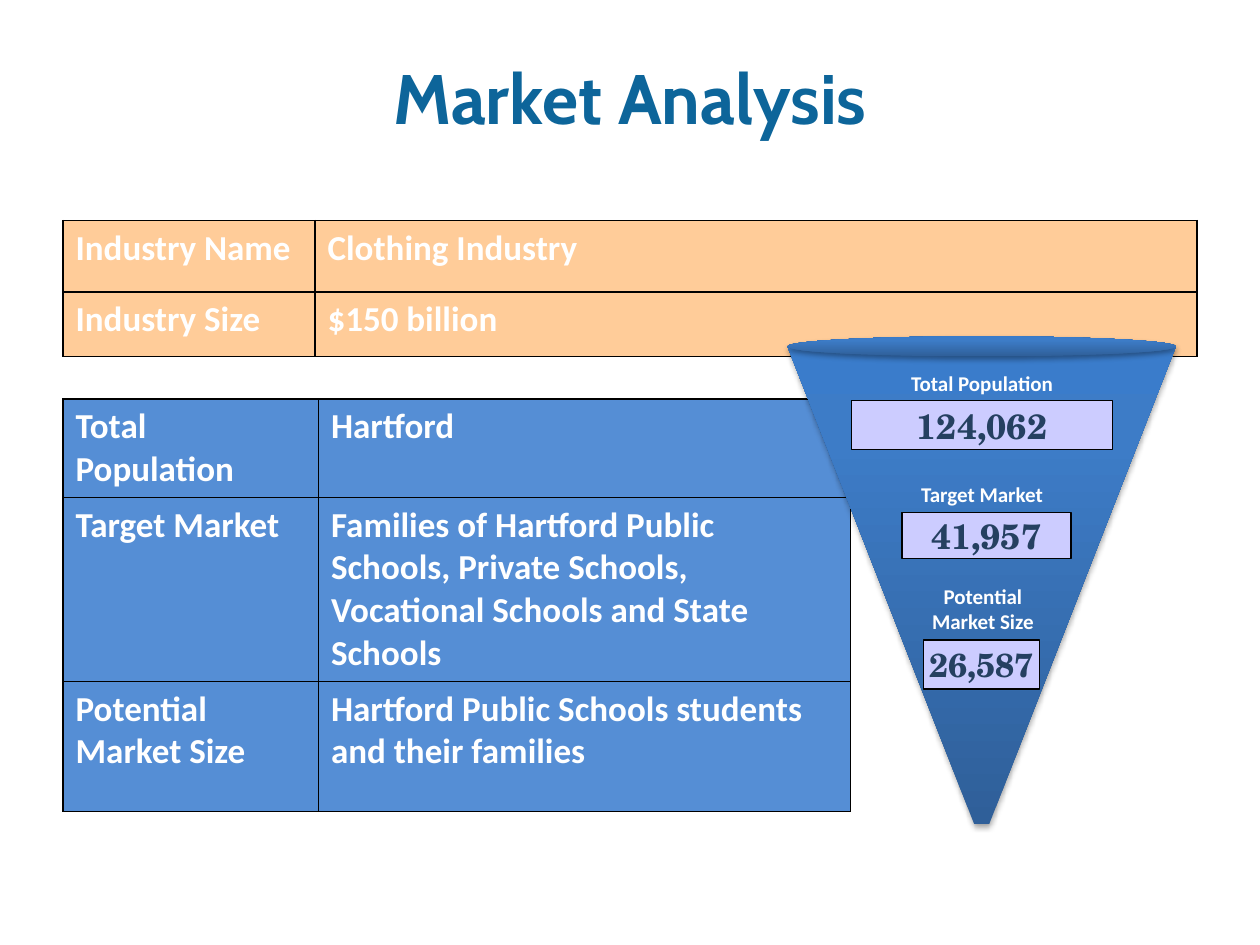
from copy import deepcopy

from lxml import etree
from pptx import Presentation
from pptx.dml.color import RGBColor
from pptx.enum.shapes import MSO_SHAPE
from pptx.enum.text import MSO_ANCHOR, PP_ALIGN
from pptx.oxml.ns import qn
from pptx.util import Pt

LEFT, CENTER = PP_ALIGN.LEFT, PP_ALIGN.CENTER
TOP, MIDDLE = MSO_ANCHOR.TOP, MSO_ANCHOR.MIDDLE
OVAL, PROCESS = MSO_SHAPE.OVAL, MSO_SHAPE.FLOWCHART_PROCESS
TITLE_ONLY = 5

INDUSTRY = [("Industry Name", "Clothing Industry"),
            ("Industry Size", "$150 billion")]
MARKET = [
    ("Total Population", "Hartford"),
    ("Target Market", "Families of Hartford Public Schools, Private Schools, "
                      "Vocational Schools and State Schools"),
    ("Potential Market Size", "Hartford Public Schools students and their families"),
]
# Label, its box, value, its size and box; boxes are relative to the funnel
FUNNEL_LEVELS = [
    ("Total Population", (36.7, 15.8, 149, 21), "124,062", 20, (36.7, 36.7, 149, 28)),
    ("Target Market", (36.7, 79.2, 149, 21), "41,957", 20, (65.5, 100.8, 96.5, 26)),
    ("Potential Market Size", (63.4, 137.5, 96.5, 34.6), "26,587", 19,
     (77.8, 173.5, 66.2, 28)),
]
FUNNEL_GRADIENT = [(0, "2F5F99"), (0.8, "3D7CC7"), (1, "3A7CCB")]


def color(value):
    return RGBColor.from_string(value)


def points(values):
    return [Pt(value) for value in values]


def write(frame, text, size=20, font="Calibri", fill="FFFFFF", align=LEFT,
          anchor=TOP, wrap=True, line_spacing=None):
    frame.word_wrap = wrap
    frame.vertical_anchor = anchor
    paragraph = frame.paragraphs[0]
    paragraph.alignment = align
    if line_spacing:
        paragraph.line_spacing = Pt(line_spacing)
    run = paragraph.add_run()
    run.text = text
    run.font.size = Pt(size)
    run.font.name = font
    run.font.bold = True
    run.font.color.rgb = color(fill)


def add_title(slide, box, text):
    title = slide.shapes.title
    title.left, title.top, title.width, title.height = points(box)
    write(title.text_frame, text, size=40, font="Cabin", fill="0D659A",
          align=CENTER, anchor=MIDDLE, line_spacing=34)


def add_borders(cell, line_color="000000", width=1):
    properties = cell._tc.get_or_add_tcPr()
    for side in ("a:lnL", "a:lnR", "a:lnT", "a:lnB"):
        line = etree.SubElement(properties, qn(side), w=str(Pt(width)))
        fill = etree.SubElement(line, qn("a:solidFill"))
        etree.SubElement(fill, qn("a:srgbClr"), val=line_color)


def add_grid(slide, left, top, widths, heights, rows, fill):
    """Add a bordered table with one fill for all its cells."""
    box = points((left, top, sum(widths), sum(heights)))
    table = slide.shapes.add_table(len(rows), len(widths), *box).table
    table.first_row = table.horz_banding = False
    for column, width in zip(table.columns, widths):
        column.width = Pt(width)
    for row, height, texts in zip(table.rows, heights, rows):
        row.height = Pt(height)
        for cell, text in zip(row.cells, texts):
            add_borders(cell)
            cell.fill.solid()
            cell.fill.fore_color.rgb = color(fill)
            write(cell.text_frame, text)


def style_funnel_part(shape):
    """Give a shape the funnel's gradient and soft shadow, without a line."""
    shape.fill.gradient()
    shape.fill.gradient_angle = 90
    properties = shape._element.spPr
    stop_list = properties.find(".//" + qn("a:gsLst"))
    stop_list.append(deepcopy(stop_list[-1]))
    for stop, (position, value) in zip(shape.fill.gradient_stops, FUNNEL_GRADIENT):
        stop.position = position
        stop.color.rgb = color(value)
    shape.line.fill.background()
    shape.shadow.inherit = False
    shadow = etree.SubElement(
        properties.find(qn("a:effectLst")), qn("a:outerShdw"),
        blurRad=str(Pt(3.1)), dist=str(Pt(1.8)), dir="5400000", rotWithShape="0")
    shadow_color = etree.SubElement(shadow, qn("a:srgbClr"), val="000000")
    etree.SubElement(shadow_color, qn("a:alpha"), val="35000")


def add_funnel(slide, left, top, width, height, rim=11.5, tip=8.6):
    shapes = slide.shapes.add_group_shape().shapes
    middle, mouth = left + width / 2, top + rim / 2
    bottom = top + height
    builder = shapes.build_freeform(Pt(left), Pt(mouth))
    builder.add_line_segments([
        points((middle - tip / 2, bottom)),
        points((middle + tip / 2, bottom)),
        points((left + width, mouth)),
    ])
    style_funnel_part(builder.convert_to_shape())
    style_funnel_part(shapes.add_shape(OVAL, *points((left, top, width, rim))))

    for label, label_box, value, size, value_box in FUNNEL_LEVELS:
        x, y, *extent = value_box
        box = shapes.add_shape(PROCESS, *points((left + x, top + y, *extent)))
        box.shadow.inherit = False
        box.fill.solid()
        box.fill.fore_color.rgb = color("CCCCFF")
        box.line.color.rgb = color("000000")
        box.line.width = Pt(0.75)
        write(box.text_frame, value, size=size, font="TeX Gyre Schola",
              fill="254061", align=CENTER, anchor=MIDDLE, wrap=False)
        x, y, *extent = label_box
        caption = shapes.add_textbox(*points((left + x, top + y, *extent)))
        write(caption.text_frame, label, size=12, align=CENTER)


def main():
    presentation = Presentation()
    presentation.slide_width, presentation.slide_height = Pt(720), Pt(540)
    slide = presentation.slides.add_slide(presentation.slide_layouts[TITLE_ONLY])
    add_title(slide, (36, 21.6, 648, 80.6), "Market Analysis")
    add_grid(slide, 36, 126, (144, 504), (41, 36.7), INDUSTRY, "FFCC99")
    add_grid(slide, 36, 228, (146, 304), (36, 94.3, 74.2), MARKET, "558ED5")
    add_funnel(slide, 450, 192.2, 222, 278.7)
    presentation.save("out.pptx")


if __name__ == "__main__":
    main()
